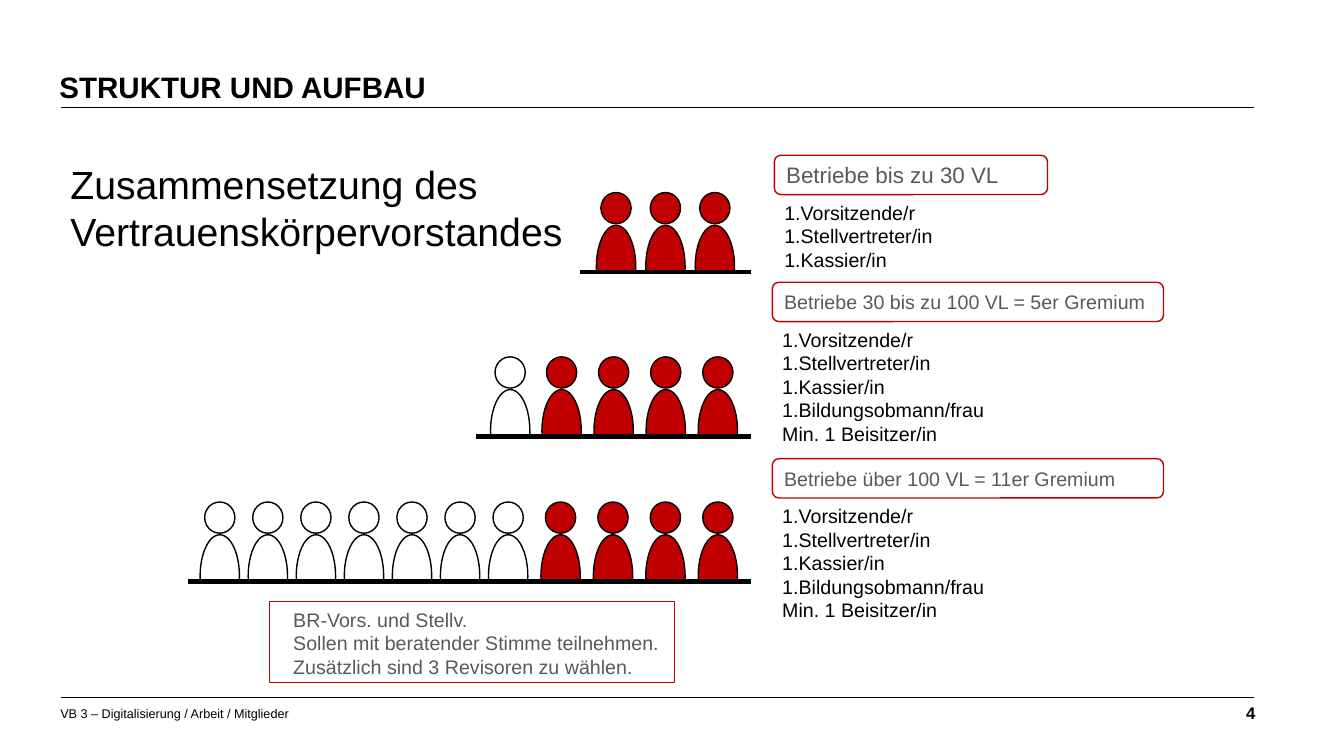
from dataclasses import dataclass
from lxml import etree
from pptx import Presentation
from pptx.dml.color import RGBColor
from pptx.enum.shapes import MSO_CONNECTOR, MSO_SHAPE
from pptx.enum.text import MSO_ANCHOR, MSO_AUTO_SIZE, PP_ALIGN
from pptx.oxml.ns import qn
from pptx.util import Inches, Pt

STRAIGHT = MSO_CONNECTOR.STRAIGHT
OVAL, CHORD = MSO_SHAPE.OVAL, MSO_SHAPE.CHORD
RECT, ROUNDED = MSO_SHAPE.RECTANGLE, MSO_SHAPE.ROUNDED_RECTANGLE
TOP, MIDDLE = MSO_ANCHOR.TOP, MSO_ANCHOR.MIDDLE
LEFT, RIGHT = PP_ALIGN.LEFT, PP_ALIGN.RIGHT


@dataclass(frozen=True)
class Theme:
    font: str = "Arial"
    black: str = "000000"
    white: str = "FFFFFF"
    red: str = "C00000"
    grey: str = "595959"
    headline: float = 28
    title: float = 21.1
    badge: float = 16
    body: float = 14
    page: float = 12
    footer: float = 9
    hairline: float = 0.5
    outline: float = 1
    bench: float = 3


T = Theme()

# Content
TITLE = "STRUKTUR UND AUFBAU"
HEADLINE = ["Zusammensetzung des", "Vertrauenskörpervorstandes"]
FOOTER = "VB 3 – Digitalisierung / Arbeit / Mitglieder"
PAGE = "4"
NOTE = [
    "BR-Vors. und Stellv.",
    "Sollen mit beratender Stimme teilnehmen.",
    "Zusätzlich sind 3 Revisoren zu wählen.",
]
SMALL_BOARD = ["1.Vorsitzende/r", "1.Stellvertreter/in", "1.Kassier/in"]
LARGE_BOARD = SMALL_BOARD + ["1.Bildungsobmann/frau", "Min. 1 Beisitzer/in"]

# Seats: (fill, number of people, left of first head, left of last head)
BOARDS = [
    dict(label="Betriebe bis zu 30 VL", size=T.badge, badge=(7.68, 1.54, 2.71),
         roles=SMALL_BOARD, roles_w=1.68, bench=(5.75, 2.7),
         seats=[(T.red, 3, 5.96, 6.94)]),
    dict(label="Betriebe 30 bis zu 100 VL = 5er Gremium", size=T.body,
         badge=(7.66, 2.8, 3.88), roles=LARGE_BOARD, roles_w=2.21,
         bench=(4.72, 4.33),
         seats=[(T.white, 1, 4.91, 4.91), (T.red, 4, 5.42, 6.97)]),
    dict(label="Betriebe über 100 VL = 11er Gremium", size=T.body,
         badge=(7.66, 4.55, 3.88), roles=LARGE_BOARD, roles_w=2.21,
         bench=(1.86, 5.77),
         seats=[(T.white, 7, 2.03, 4.89), (T.red, 4, 5.41, 6.97)]),
]

# Measures in inches
SLIDE_W, SLIDE_H = 13.33, 7.5
RULE_LEFT, RULE_RIGHT = 0.61, 12.44
RULES = [1.07, 6.92]
BENCH_RIGHT = 7.45
BADGE_H, LINE_H, INSET = 0.39, 0.235, 0.05
HEAD_W, HEAD_H, HEAD_RISE = 0.3, 0.31, 0.79
BODY_W, BODY_H, BODY_DROP = 0.82, 0.39, 0.54
CHORD_ANGLES = (46.53, 169.3)

prs = Presentation()
prs.slide_width, prs.slide_height = Inches(SLIDE_W), Inches(SLIDE_H)
s = prs.slides.add_slide(prs.slide_layouts[6])


def box(x, y, w, h):
    return [Inches(v) for v in (x, y, w, h)]


def write(sp, lines, size, color, anchor=TOP, align=LEFT, bold=False):
    tf = sp.text_frame
    tf.vertical_anchor = anchor
    for i, line in enumerate(lines):
        p = tf.paragraphs[0] if i == 0 else tf.add_paragraph()
        p.alignment = align
        r = p.add_run()
        r.text = line
        r.font.name, r.font.size, r.font.bold = T.font, Pt(size), bold
        r.font.color.rgb = RGBColor.from_string(color)
    return tf


def add_text(place, lines, size, color=T.black, wrap=False, **style):
    sp = s.shapes.add_textbox(*box(*place))
    tf = write(sp, lines, size, color, **style)
    tf.word_wrap = wrap
    tf.auto_size = MSO_AUTO_SIZE.NONE if wrap else MSO_AUTO_SIZE.SHAPE_TO_FIT_TEXT
    return tf


def add_shape(kind, place, fill, line):
    sp = s.shapes.add_shape(kind, *box(*place))
    sp.shadow.inherit = False
    sp.fill.solid()
    sp.fill.fore_color.rgb = RGBColor.from_string(fill)
    sp.line.color.rgb = RGBColor.from_string(line)
    sp.line.width = Pt(T.outline)
    return sp


def add_rule(left, right, y, width):
    c = s.shapes.add_connector(STRAIGHT, *box(left, y, right, y))
    c.line.color.rgb = RGBColor.from_string(T.black)
    c.line.width = Pt(width)
    etree.SubElement(c._element.spPr, qn("a:effectLst"))


def add_person(left, bench_y, fill):
    """Draw a seated person: a chord turned upright below a round head."""
    top = bench_y - HEAD_RISE
    body_left = left + (HEAD_W - BODY_W) / 2
    body = add_shape(CHORD, (body_left, top + BODY_DROP, BODY_W, BODY_H), fill, T.black)
    body.rotation = 90
    for i, angle in enumerate(CHORD_ANGLES):
        body.adjustments[i] = angle
    add_shape(OVAL, (left, top, HEAD_W, HEAD_H), fill, T.black)


def add_board(board):
    x, y, w = board["badge"]
    badge = add_shape(ROUNDED, (x, y, w, BADGE_H), T.white, T.red)
    write(badge, [board["label"]], board["size"], T.grey, MIDDLE)
    roles = board["roles"]
    roles_h = len(roles) * LINE_H + 2 * INSET
    add_text((x, y + BADGE_H + 0.01, board["roles_w"], roles_h), roles, T.body)
    bench_left, bench_y = board["bench"]
    for fill, count, first, last in board["seats"]:
        pitch = (last - first) / max(count - 1, 1)
        for i in range(count):
            add_person(first + i * pitch, bench_y, fill)
    add_rule(bench_left, BENCH_RIGHT, bench_y, T.bench)


for rule_y in RULES:
    add_rule(RULE_LEFT, RULE_RIGHT, rule_y, T.hairline)
add_text((6.23, 6.92, 6.32, 0.3), [PAGE], T.page, wrap=True, align=RIGHT, bold=True)
add_text((0.5, 6.95, 6.32, 0.25), [FOOTER], T.footer, wrap=True)

for board in BOARDS:
    add_board(board)

add_shape(RECT, (2.67, 5.97, 4.02, 0.8), T.white, T.red)
add_text((2.81, 5.98, 3.85, 0.81), NOTE, T.body, T.grey)
add_text((0.6, 1.54, 5.15, 1.04), HEADLINE, T.headline)

tf = add_text((0.46, 0.63, 10.06, 0.44), [TITLE], T.title, wrap=True, anchor=MIDDLE, bold=True)
tf.margin_left = tf.margin_right = Inches(0.13)
tf.margin_top, tf.margin_bottom = Inches(0.09), Inches(0.03)
tf.paragraphs[0].line_spacing = 0.9

prs.save("out.pptx")
